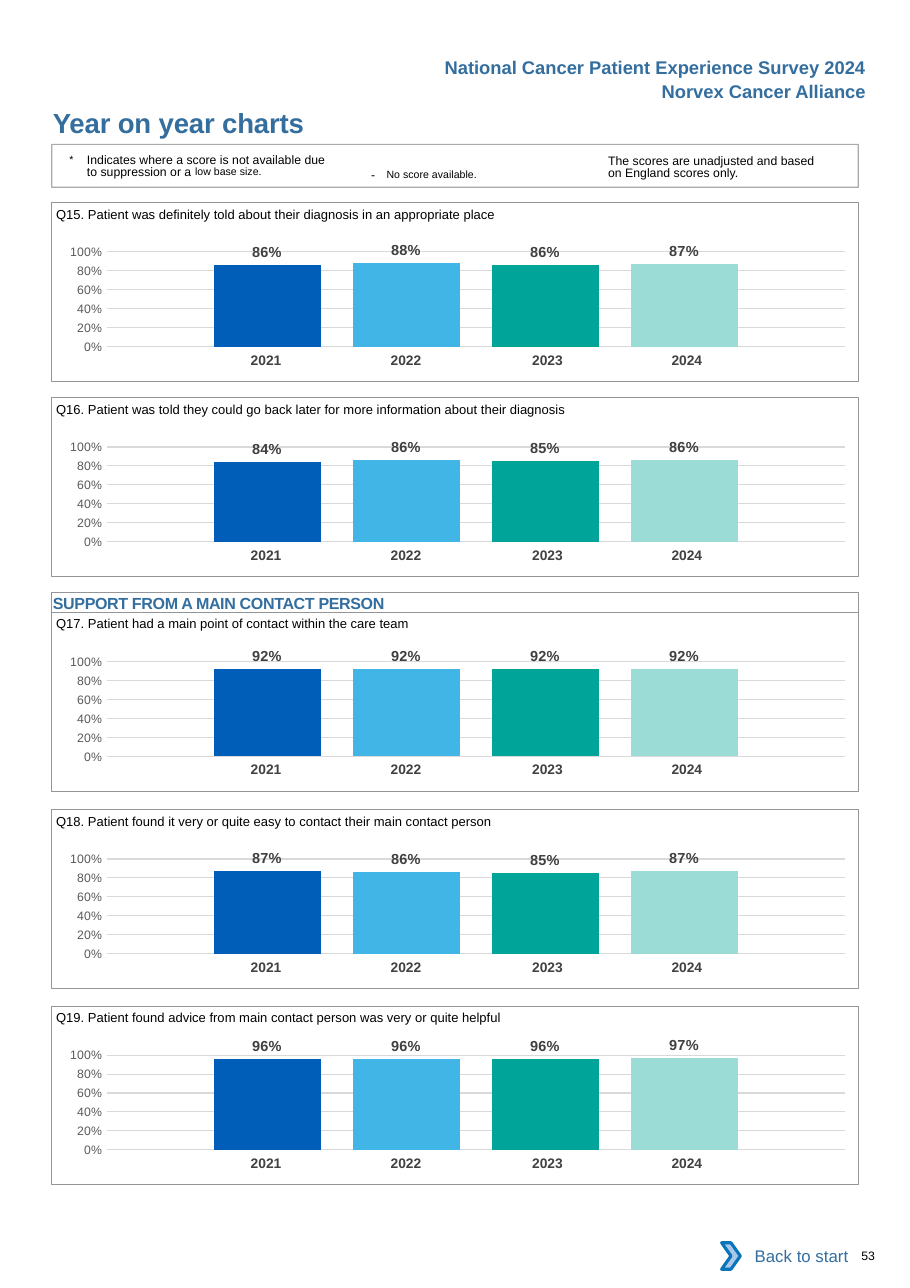
from lxml.etree import SubElement
from pptx import Presentation
from pptx.chart.data import CategoryChartData as ChartData
from pptx.dml.color import RGBColor as RGB
from pptx.enum.chart import XL_CHART_TYPE as Kind, XL_LABEL_POSITION as Place, XL_TICK_MARK as Tick
from pptx.enum.shapes import MSO_SHAPE as Shape
from pptx.enum.text import MSO_ANCHOR as Anchor, PP_ALIGN as Align
from pptx.oxml import parse_xml
from pptx.oxml.ns import nsdecls, qn
from pptx.util import Inches, Pt

BLACK, WHITE = RGB(0, 0, 0), RGB(255, 255, 255)
BLUE = RGB(0x33, 0x6E, 0x9F)
EDGE = RGB(0x93, 0x95, 0x98)
GRID = RGB(0xD9, 0xD9, 0xD9)
SCALE = RGB(0x59, 0x59, 0x59)
SCORE = RGB(0x40, 0x40, 0x40)
YEAR = RGB(0x41, 0x40, 0x42)
ARROW, RIM = RGB(0xA8, 0xC7, 0xE9), RGB(0x0A, 0x74, 0xBB)
BARS = RGB(0, 0x5E, 0xB8), RGB(0x41, 0xB6, 0xE6), RGB(0, 0xA4, 0x99), RGB(0x9C, 0xDC, 0xD7)

LEFT, WIDTH = 0.47, 7.32
YEARS = (("2021", 1.27, 0), ("2022", 1.27, 0), ("2023", 1.34, 0.04), ("2024", 1.27, 0.12))
PANELS = (
    (1.84, "Q15. Patient was definitely told about their diagnosis in an appropriate place",
     (0.86, 0.88, 0.86, 0.87)),
    (3.61, "Q16. Patient was told they could go back later for more information about their diagnosis",
     (0.84, 0.86, 0.85, 0.86)),
    (5.56, "Q17. Patient had a main point of contact within the care team",
     (0.92, 0.92, 0.92, 0.92)),
    (7.35, "Q18. Patient found it very or quite easy to contact their main contact person",
     (0.87, 0.86, 0.85, 0.87)),
    (9.13, "Q19. Patient found advice from main contact person was very or quite helpful",
     (0.96, 0.96, 0.96, 0.97)),
)


def style(font, size, color=BLACK, bold=False):
    """Set an Arial font's size, colour and weight."""
    font.name, font.size, font.bold = "Arial", Pt(size), bold
    font.color.rgb = color


def write(shape, words, size, color=BLACK, bold=False, align=Align.LEFT, pad=(0, 0, 0, 0), track=0):
    """Write one paragraph in a shape and return it."""
    frame = shape.text_frame
    frame.word_wrap = True
    frame.margin_left, frame.margin_top, frame.margin_right, frame.margin_bottom = map(Inches, pad)
    para = frame.paragraphs[0]
    para.text, para.alignment = words, align
    style(para.font, size, color, bold)
    if track:
        para.runs[0]._r.get_or_add_rPr().set("spc", str(track))
    return para


def label(slide, box, words, size, **look):
    """Add a text box and return its paragraph."""
    return write(slide.shapes.add_textbox(*map(Inches, box)), words, size, **look)


def block(slide, kind, box, fill=None, line=None, weight=0.5):
    """Add a preset shape with optional fill and line."""
    shape = slide.shapes.add_shape(kind, *map(Inches, box))
    shape.shadow.inherit = False
    for part, color in ((shape.fill, fill), (shape.line.fill, line)):
        if color is None:
            part.background()
        else:
            part.solid()
            part.fore_color.rgb = color
    if line is not None:
        shape.line.width = Pt(weight)
    shape.text_frame.vertical_anchor = Anchor.TOP
    return shape


def small(para, words, base):
    """Append a raised run that is drawn at reduced size."""
    run = para.add_run()
    run.text, run.font.size = words, Pt(12)
    run._r.get_or_add_rPr().set("baseline", str(base))


def years(slide, top):
    """Add the row of years under a chart."""
    box = map(Inches, (1.73, top, 5.15, 0.27))
    table = slide.shapes.add_table(1, len(YEARS), *box).table
    table.first_row = table.horz_banding = False
    table._tbl.tblPr[0].text = "{2D5ABB26-0587-4C30-8999-92F81FD0307C}"
    for index, (year, width, right) in enumerate(YEARS):
        table.columns[index].width = Inches(width)
        cell = table.cell(0, index)
        cell.fill.background()
        cell.margin_left, cell.margin_right = Inches(0.1), Inches(right)
        para = cell.text_frame.paragraphs[0]
        para.text, para.alignment = year, Align.CENTER
        style(para.font, 9, YEAR, True)


def layout(chart):
    """Fix the plot's inner frame and clear the chart's background."""
    area = chart._chartSpace.chart.plotArea
    for old in area.findall(qn("c:layout")):
        area.remove(old)
    frame = parse_xml(f"<c:layout {nsdecls('c')}><c:manualLayout/></c:layout>")
    marks = (("layoutTarget", "inner"), ("xMode", "edge"), ("yMode", "edge"),
             ("x", "0.079"), ("y", "0.145"), ("w", "0.915"), ("h", "0.666"))
    for name, value in marks:
        SubElement(frame[0], qn(f"c:{name}")).set("val", value)
    area.insert(0, frame)
    clear = f"<c:spPr {nsdecls('c', 'a')}><a:noFill/><a:ln><a:noFill/></a:ln></c:spPr>"
    chart._chartSpace.chart.addnext(parse_xml(clear))


def scores(slide, top, values):
    """Add the column chart of yearly scores."""
    data = ChartData(number_format="0%")
    data.categories = ["1"]
    for index, value in enumerate(values, 1):
        data.add_series(f"Series {index}", [value])
    box = map(Inches, (0.39, top, WIDTH, 1.29))
    chart = slide.shapes.add_chart(Kind.COLUMN_CLUSTERED, *box, data).chart
    chart.has_legend = chart.has_title = False
    chart.font.name, chart.font.size = "Calibri", Pt(10)
    chart.font.color.rgb = BLACK
    layout(chart)
    chart.category_axis.visible = False
    axis = chart.value_axis
    axis.minimum_scale, axis.maximum_scale, axis.major_unit = 0, 1, 0.2
    axis.major_tick_mark = axis.minor_tick_mark = Tick.NONE
    axis.format.line.fill.background()
    grid = axis.major_gridlines.format.line
    grid.color.rgb, grid.width = GRID, Pt(0.75)
    axis.tick_labels.number_format = "0%"
    axis.tick_labels.number_format_is_linked = False
    style(axis.tick_labels.font, 8, SCALE)
    plot = chart.plots[0]
    plot.gap_width, plot.overlap, plot.vary_by_categories = 200, -30, False
    for series, color in zip(plot.series, BARS):
        series.invert_if_negative = False
        series.format.fill.solid()
        series.format.fill.fore_color.rgb = color
        marks = series.data_labels
        marks.show_value, marks.position = True, Place.OUTSIDE_END
        marks.number_format, marks.number_format_is_linked = "0%", False
        style(marks.font, 9.5, SCORE, True)


def panel(slide, top, title, values):
    """Add one framed question with its chart and years."""
    years(slide, top + 1.31)
    scores(slide, top + 0.26, values)
    block(slide, Shape.RECTANGLE, (LEFT, top, WIDTH, 1.62), line=EDGE)
    label(slide, (0.5, top - 0.06, 6, 0.24), title, 8.5, pad=(0.01, 0.09, 0, 0))


def notes(slide):
    """Add the framed notes on how to read the scores."""
    frame = block(slide, Shape.RECTANGLE, (LEFT, 1.31, WIDTH, 0.39), line=EDGE, weight=0.75)
    tint = next(frame.line._ln.iter(qn("a:srgbClr")))
    SubElement(tint, qn("a:alpha")).set("val", "80000")
    pad = (0, 0.03, 0, 0)
    star = label(slide, (0.63, 1.38, 2.4, 0.28), "", 8, pad=pad)
    small(star, "*\t", 3000)
    star.add_run().text = "Indicates where a score is not available due to suppression or a "
    small(star, "low base size.", 7000)
    hang = star._p.get_or_add_pPr()
    hang.set("marL", str(Inches(0.16)))
    hang.set("indent", str(-Inches(0.16)))
    dash = label(slide, (3.27, 1.41, 1.83, 0.24), "- ", 8, pad=(0.1, 0.05, 0.1, 0.05), track=260)
    small(dash, "No score available.", 3000)
    basis = label(slide, (5.52, 1.38, 2.01, 0.27),
                  "The scores are unadjusted and based on England scores only.", 8, pad=pad)
    star.line_spacing = basis.line_spacing = Pt(8.1)


def main():
    """Build the page of year on year charts."""
    deck = Presentation()
    deck.slide_width, deck.slide_height = Inches(8.26), Inches(11.69)
    slide = deck.slides.add_slide(deck.slide_layouts[6])
    inset = (0.1, 0.05, 0.1, 0.05)
    head = dict(color=BLUE, bold=True, align=Align.RIGHT, pad=inset)
    label(slide, (3.46, 0.46, 4.5, 0.3), "National Cancer Patient Experience Survey 2024", 12, **head)
    label(slide, (3.46, 0.68, 4.5, 0.3), "Norvex Cancer Alliance", 12, **head)
    label(slide, (LEFT, 0.96, 4.5, 0.3), "Year on year charts", 18,
          color=BLUE, bold=True, pad=(0.01, 0, 0, 0), track=-10)
    notes(slide)
    for top, title, values in PANELS:
        panel(slide, top, title, values)
    band = block(slide, Shape.RECTANGLE, (LEFT, 5.38, WIDTH, 0.18), line=EDGE)
    write(band, "SUPPORT FROM A MAIN CONTACT PERSON", 10.5, BLUE, True, pad=(0.01, 0.01, 0, 0), track=-20)
    back = block(slide, Shape.RECTANGLE, (6.62, 11.19, 1.18, 0.42), fill=WHITE)
    back.text_frame.vertical_anchor = Anchor.MIDDLE
    write(back, "Back to start", 11, BLUE, align=Align.RIGHT, pad=inset)
    block(slide, Shape.CHEVRON, (6.55, 11.28, 0.17, 0.24), ARROW, RIM, 2)
    label(slide, (7.72, 11.33, 0.51, 0.13), "53", 8, pad=(0.1, 0, 0, 0))
    deck.save("out.pptx")


if __name__ == "__main__":
    main()
